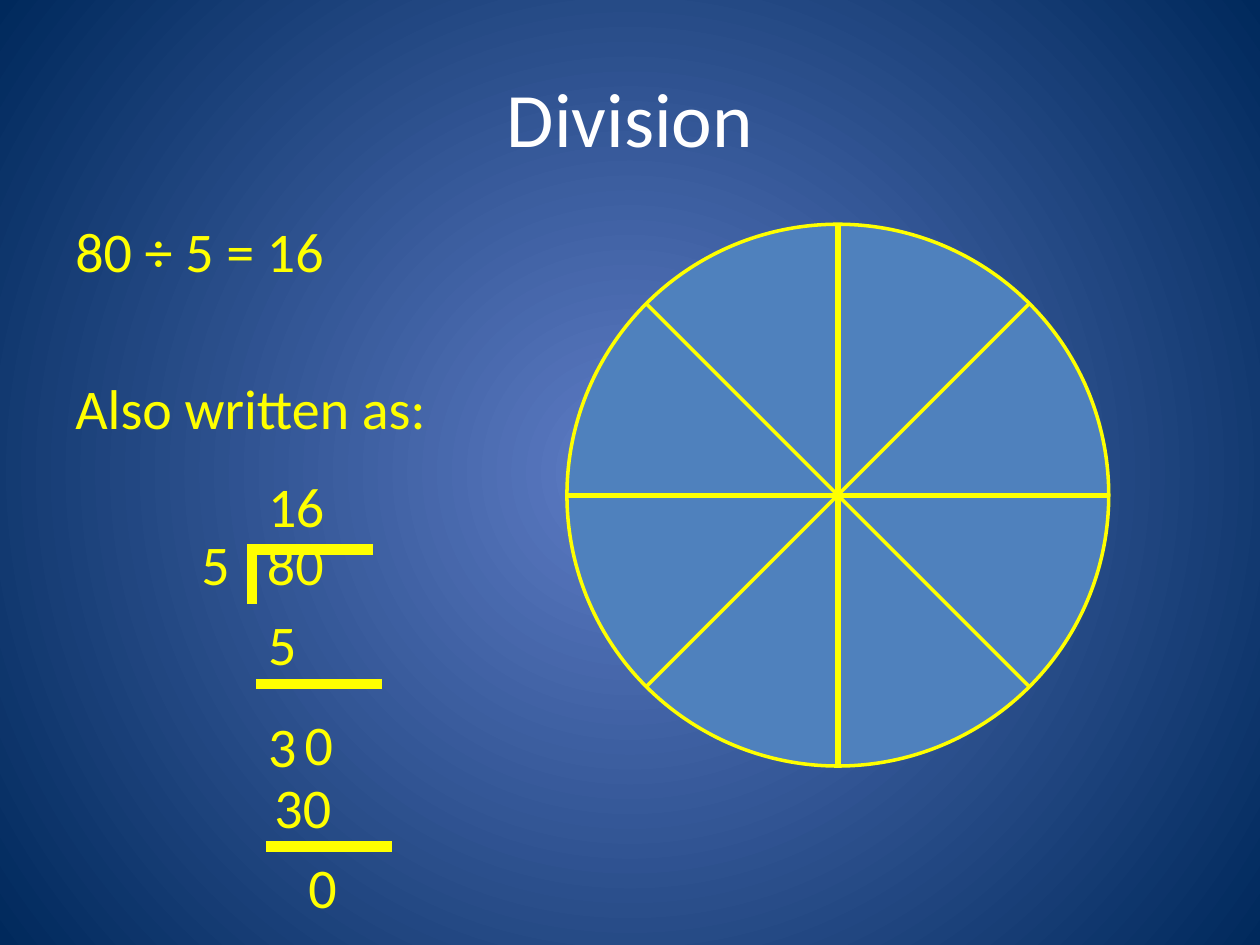
from lxml import etree
from pptx import Presentation
from pptx import util as u
from pptx.dml.color import RGBColor
from pptx.enum import shapes, text
from pptx.oxml import parse_xml
from pptx.oxml.ns import nsdecls, qn

YELLOW = "FFFF00"
WHITE = "FFFFFF"


def color(value):
    """Turn a hex string into a colour."""
    return RGBColor.from_string(value)


def add_text(slide, paragraphs, left, top, width, height, size=32, fill=YELLOW,
             align=text.PP_ALIGN.LEFT, anchor=text.MSO_ANCHOR.TOP, gap=0):
    """Add a text box with one paragraph per string, gap points apart."""
    box = slide.shapes.add_textbox(*map(u.Inches, (left, top, width, height)))
    frame = box.text_frame
    frame.word_wrap = True
    frame.vertical_anchor = anchor
    for index, content in enumerate(paragraphs):
        paragraph = frame.add_paragraph() if index else frame.paragraphs[0]
        paragraph.alignment = align
        paragraph.space_before = u.Pt(gap if index else 0)
        run = paragraph.add_run()
        run.text = content
        run.font.name = "Calibri"
        run.font.size = u.Pt(size)
        run.font.color.rgb = color(fill)


def add_line(slide, start, end, weight):
    """Draw a straight yellow line without a shadow."""
    line = slide.shapes.add_connector(
        shapes.MSO_CONNECTOR.STRAIGHT, *map(u.Inches, (*start, *end)))
    line.line.color.rgb = color(YELLOW)
    line.line.width = u.Pt(weight)
    etree.SubElement(line._element.spPr, qn("a:effectLst"))


def paint_background(slide, inner, outer):
    """Fill the background with a gradient that spreads from the centre."""
    fill = slide.background.fill
    fill.gradient()
    for stop, value, position in zip(fill.gradient_stops, (inner, outer), (0, 1)):
        stop.color.rgb = color(value)
        stop.position = position
    linear = next(slide._element.iter(qn("a:lin")))
    linear.getparent().replace(linear, parse_xml(
        f'<a:path {nsdecls("a")} path="circle">'
        '<a:fillToRect l="50000" t="50000" r="50000" b="50000"/></a:path>'))


def add_title(slide, left, top, width, height):
    """Place the centred heading."""
    add_text(slide, ["Division"], left, top, width, height, size=44, fill=WHITE,
             align=text.PP_ALIGN.CENTER, anchor=text.MSO_ANCHOR.MIDDLE)


def add_long_division(slide, left, top):
    """Write the worked division, with its bracket and subtraction rules."""
    numbers = [("1", 0.53, 0), ("6", 0.75, 0), ("5", 0, 0.46), ("80", 0.52, 0.46),
               ("5", 0.53, 1.1), ("3", 0.53, 1.91), ("0", 0.82, 1.89),
               ("30", 0.58, 2.39), ("0", 0.85, 3.03)]
    for number, x, y in numbers:
        add_text(slide, [number], left + x, top + y, 0.22 + 0.25 * len(number), 0.64)
    add_line(slide, (left + 0.5, top + 1.1), (left + 0.5, top + 0.64), 6)
    for x, y in [(0.46, 0.67), (0.53, 1.74), (0.61, 3.03)]:
        add_line(slide, (left + x, top + y), (left + x + 1, top + y), 6)


def add_wheel(slide, left, top, size):
    """Draw a circle cut into eight equal parts."""
    wheel = slide.shapes.add_shape(
        shapes.MSO_SHAPE.FLOWCHART_SUMMING_JUNCTION,
        *map(u.Inches, (left, top, size, size)))
    wheel.shadow.inherit = False
    wheel.fill.solid()
    wheel.fill.fore_color.rgb = color("4F81BD")
    wheel.line.color.rgb = color(YELLOW)
    wheel.line.width = u.Pt(2)
    radius = size / 2
    center = (left + radius, top + radius)
    for x, y in [(0, -1), (1, 0), (0, 1), (-1, 0)]:
        add_line(slide, center, (center[0] + x * radius, center[1] + y * radius), 3)


def main():
    """Build and save the division slide."""
    presentation = Presentation()
    presentation.slide_width = u.Inches(10)
    presentation.slide_height = u.Inches(7.5)
    slide = presentation.slides.add_slide(presentation.slide_layouts[6])
    paint_background(slide, "5E7CC5", "00295C")
    add_title(slide, 0.5, 0.3, 9, 1.25)
    add_text(slide, ["80 ÷ 5 = 16", "Also written as:"], 0.5, 1.67, 3.9, 1.9, gap=51)
    add_long_division(slide, 1.5, 3.69)
    add_wheel(slide, 4.5, 1.78, 4.3)
    presentation.save("out.pptx")


if __name__ == "__main__":
    main()
